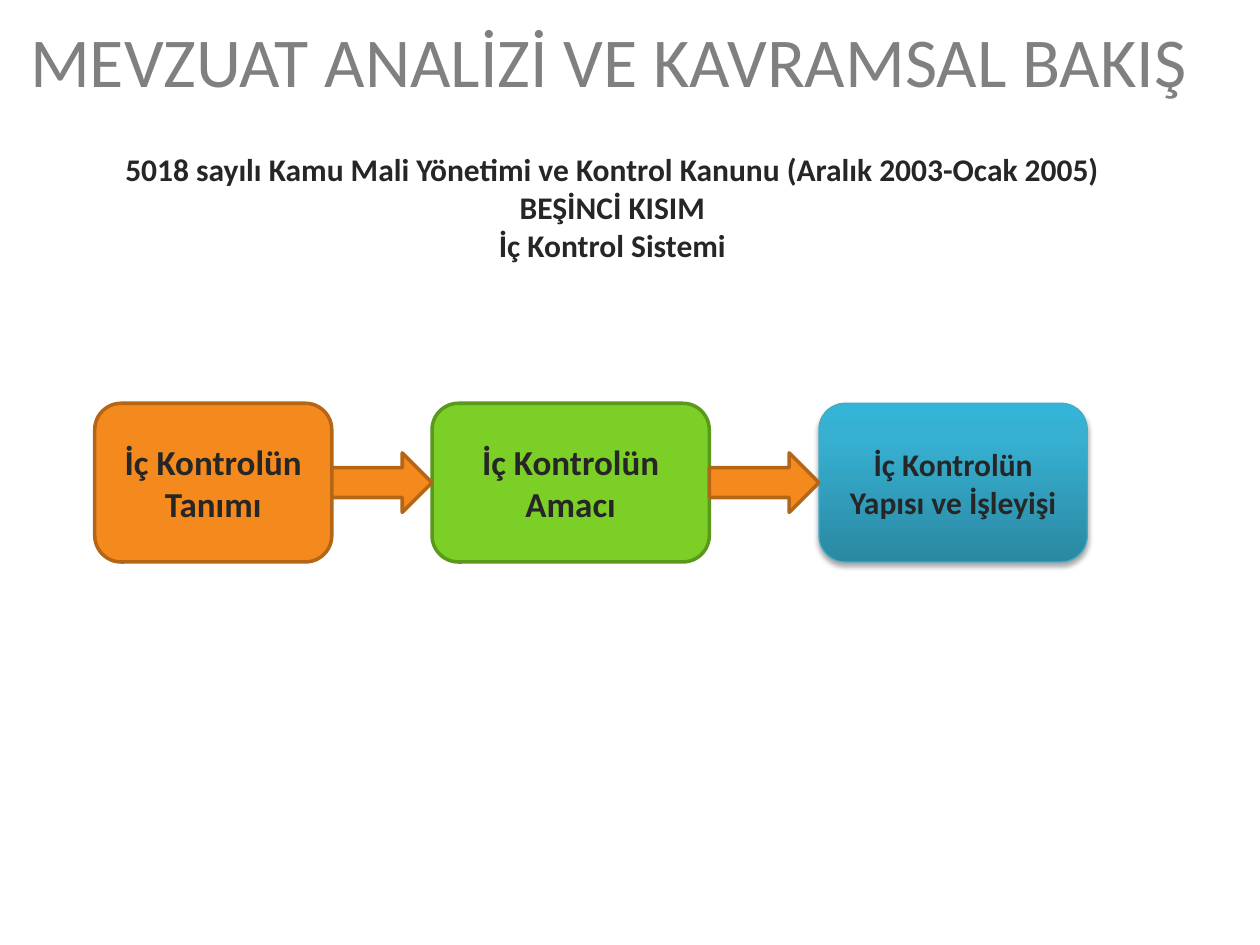
"""Build the slide on the internal control system as a three-step flow."""
import itertools

import lxml.etree
import pptx
import pptx.dml.color
import pptx.enum.shapes
import pptx.enum.text
import pptx.oxml
import pptx.oxml.ns
import pptx.util

Cm = pptx.util.Cm
Pt = pptx.util.Pt
SHAPES = pptx.enum.shapes.MSO_SHAPE
CENTER = pptx.enum.text.PP_ALIGN.CENTER
MIDDLE = pptx.enum.text.MSO_ANCHOR.MIDDLE


def paint(color_format, color):
    color_format.rgb = pptx.dml.color.RGBColor.from_string(color)


def write(shape, text, size, color, bold=False, alignment=None, anchor=None):
    text_frame = shape.text_frame
    text_frame.text = text
    text_frame.word_wrap = True
    text_frame.vertical_anchor = anchor
    for paragraph in text_frame.paragraphs:
        paragraph.alignment = alignment
        for run in paragraph.runs:
            run.font.name = "Calibri"
            run.font.size = Pt(size)
            run.font.bold = bold
            paint(run.font.color, color)


presentation = pptx.Presentation()
presentation.slide_width = Cm(25.4)
presentation.slide_height = Cm(19.05)
slide = presentation.slides.add_slide(presentation.slide_layouts[6])

title = slide.shapes.add_textbox(Cm(0.36), Cm(0), Cm(24.89), Cm(2.39))
write(title, "MEVZUAT ANALİZİ VE KAVRAMSAL BAKIŞ", 40, "808080", anchor=MIDDLE)

law = slide.shapes.add_textbox(Cm(2.11), Cm(2.9), Cm(20.47), Cm(2.57))
law_text = "\n".join([
    "5018 sayılı Kamu Mali Yönetimi ve Kontrol Kanunu (Aralık 2003-Ocak 2005)",
    "BEŞİNCİ KISIM",
    "İç Kontrol Sistemi",
])
write(law, law_text, 18, "262626", True, CENTER)

step_top, step_height = Cm(8.13), Cm(3.2)
steps = [
    ("İç Kontrolün Tanımı", 1.91, 4.78, 20, "F4891E", "B56516", 2),
    ("İç Kontrolün Amacı", 8.71, 5.59, 20, "7BCF27", "5B991D", 2),
    ("İç Kontrolün Yapısı ve İşleyişi", 16.51, 5.41, 18, "34B4D6", "46AAC5", 0.75),
]
boxes = []
for text, left, width, size, fill, line, line_width in steps:
    box = slide.shapes.add_shape(
        SHAPES.ROUNDED_RECTANGLE, Cm(left), step_top, Cm(width), step_height)
    box.shadow.inherit = False
    box.fill.solid()
    paint(box.fill.fore_color, fill)
    paint(box.line.color, line)
    box.line.width = Pt(line_width)
    write(box, text, size, "262626", True, CENTER, MIDDLE)
    boxes.append(box)

structure = boxes[-1]
structure.fill.gradient()
structure.fill.gradient_angle = 90
qn = pptx.oxml.ns.qn
properties = structure._element.spPr
stops = properties.find(".//" + qn("a:gsLst"))
for stop in list(stops):
    stops.remove(stop)
for position, color in [(0, "2A88A2"), (80, "37B1D2"), (100, "34B4D6")]:
    stop = lxml.etree.SubElement(stops, qn("a:gs"), pos=str(position * 1000))
    lxml.etree.SubElement(stop, qn("a:srgbClr"), val=color)
shadow = lxml.etree.SubElement(
    properties.find(qn("a:effectLst")), qn("a:outerShdw"),
    blurRad=str(Pt(3.1)), dist=str(Pt(1.8)), dir="5400000", rotWithShape="0")
shadow_color = lxml.etree.SubElement(shadow, qn("a:srgbClr"), val="000000")
lxml.etree.SubElement(shadow_color, qn("a:alpha"), val="35000")

arrow_height = Cm(1.2)
arrow_top = step_top + (step_height - arrow_height) // 2
for source, target in itertools.pairwise(boxes):
    start = source.left + source.width
    arrow = slide.shapes.add_shape(
        SHAPES.RIGHT_ARROW, start, arrow_top, target.left - start, arrow_height)
    arrow.shadow.inherit = False
    arrow.fill.solid()
    paint(arrow.fill.fore_color, "F4891E")
    paint(arrow.line.color, "B56516")
    arrow.line.width = Pt(2)

presentation.save("out.pptx")
